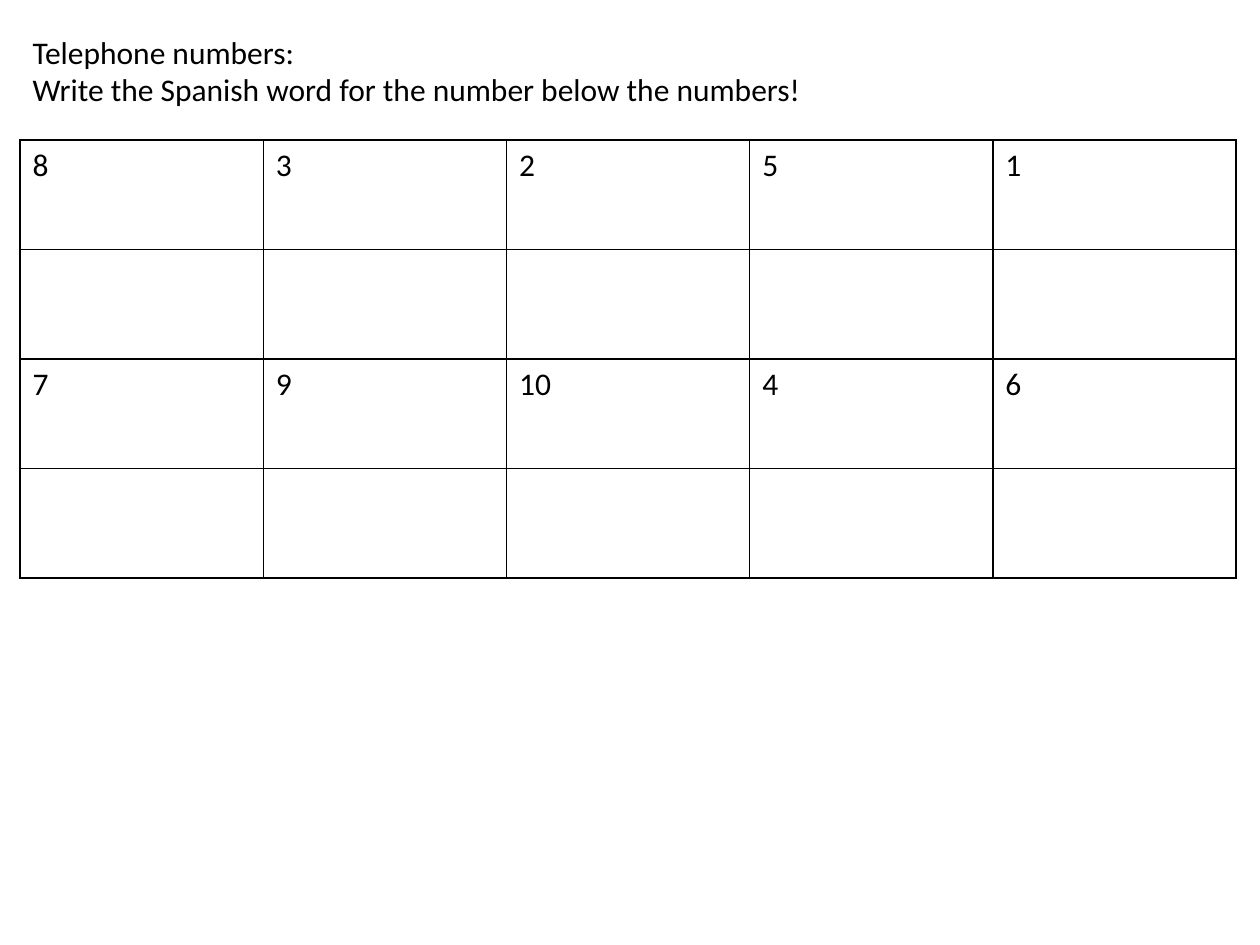
"""Builds a Spanish number worksheet with a grid of digits and answer spaces."""
from dataclasses import dataclass

from lxml import etree
from pptx import Presentation
from pptx.dml.color import RGBColor
from pptx.enum.text import MSO_AUTO_SIZE
from pptx.oxml.ns import qn
from pptx.util import Inches, Pt

FIT_SHAPE = MSO_AUTO_SIZE.SHAPE_TO_FIT_TEXT
BORDER_SIDES = ("a:lnL", "a:lnR", "a:lnT", "a:lnB")


@dataclass(frozen=True)
class Theme:
    font: str = "Calibri"
    size: Pt = Pt(18)
    ink: RGBColor = RGBColor(0, 0, 0)
    paper: RGBColor = RGBColor(255, 255, 255)
    border: Pt = Pt(1)


@dataclass(frozen=True)
class NumberGrid:
    rows: tuple[tuple[str, ...], ...]
    left: float
    top: float
    cell_width: float
    cell_height: float


THEME = Theme()
INSTRUCTIONS = (
    "Telephone numbers:",
    "Write the Spanish word for the number below the numbers!",
)
ANSWERS = ("",) * 5
GRID = NumberGrid(
    rows=(("8", "3", "2", "5", "1"), ANSWERS, ("7", "9", "10", "4", "6"), ANSWERS),
    left=0.16,
    top=1.11,
    cell_width=1.93,
    cell_height=0.87,
)


def style_font(font) -> None:
    font.name = THEME.font
    font.size = THEME.size
    font.color.rgb = THEME.ink


def add_run(paragraph, wording: str) -> None:
    run = paragraph.add_run()
    run.text = wording
    style_font(run.font)


def add_instructions(slide) -> None:
    frame = slide.shapes.add_textbox(
        Inches(0.16), Inches(0.21), Inches(6.71), Inches(0.71)
    ).text_frame
    frame.word_wrap = True
    frame.auto_size = FIT_SHAPE
    for index, line in enumerate(INSTRUCTIONS):
        paragraph = frame.add_paragraph() if index else frame.paragraphs[0]
        add_run(paragraph, line)


def add_borders(cell) -> None:
    properties = cell._tc.get_or_add_tcPr()
    for position, side in enumerate(BORDER_SIDES):
        border = etree.Element(qn(side), w=str(int(THEME.border)))
        fill = etree.SubElement(border, qn("a:solidFill"))
        etree.SubElement(fill, qn("a:srgbClr"), val=str(THEME.ink))
        properties.insert(position, border)


def add_number_grid(slide, grid: NumberGrid) -> None:
    row_count, column_count = len(grid.rows), len(grid.rows[0])
    table = slide.shapes.add_table(
        row_count,
        column_count,
        Inches(grid.left),
        Inches(grid.top),
        Inches(grid.cell_width * column_count),
        Inches(grid.cell_height * row_count),
    ).table
    table.first_row = False
    table.horz_banding = False
    for column in table.columns:
        column.width = Inches(grid.cell_width)
    for row, numbers in zip(table.rows, grid.rows):
        row.height = Inches(grid.cell_height)
        for cell, number in zip(row.cells, numbers):
            cell.fill.solid()
            cell.fill.fore_color.rgb = THEME.paper
            add_borders(cell)
            paragraph = cell.text_frame.paragraphs[0]
            if number:
                add_run(paragraph, number)
            else:
                style_font(paragraph.font)


def main() -> None:
    worksheet = Presentation()
    worksheet.slide_width = Inches(10)
    worksheet.slide_height = Inches(7.5)
    slide = worksheet.slides.add_slide(worksheet.slide_layouts[6])
    add_instructions(slide)
    add_number_grid(slide, GRID)
    worksheet.save("out.pptx")


if __name__ == "__main__":
    main()
